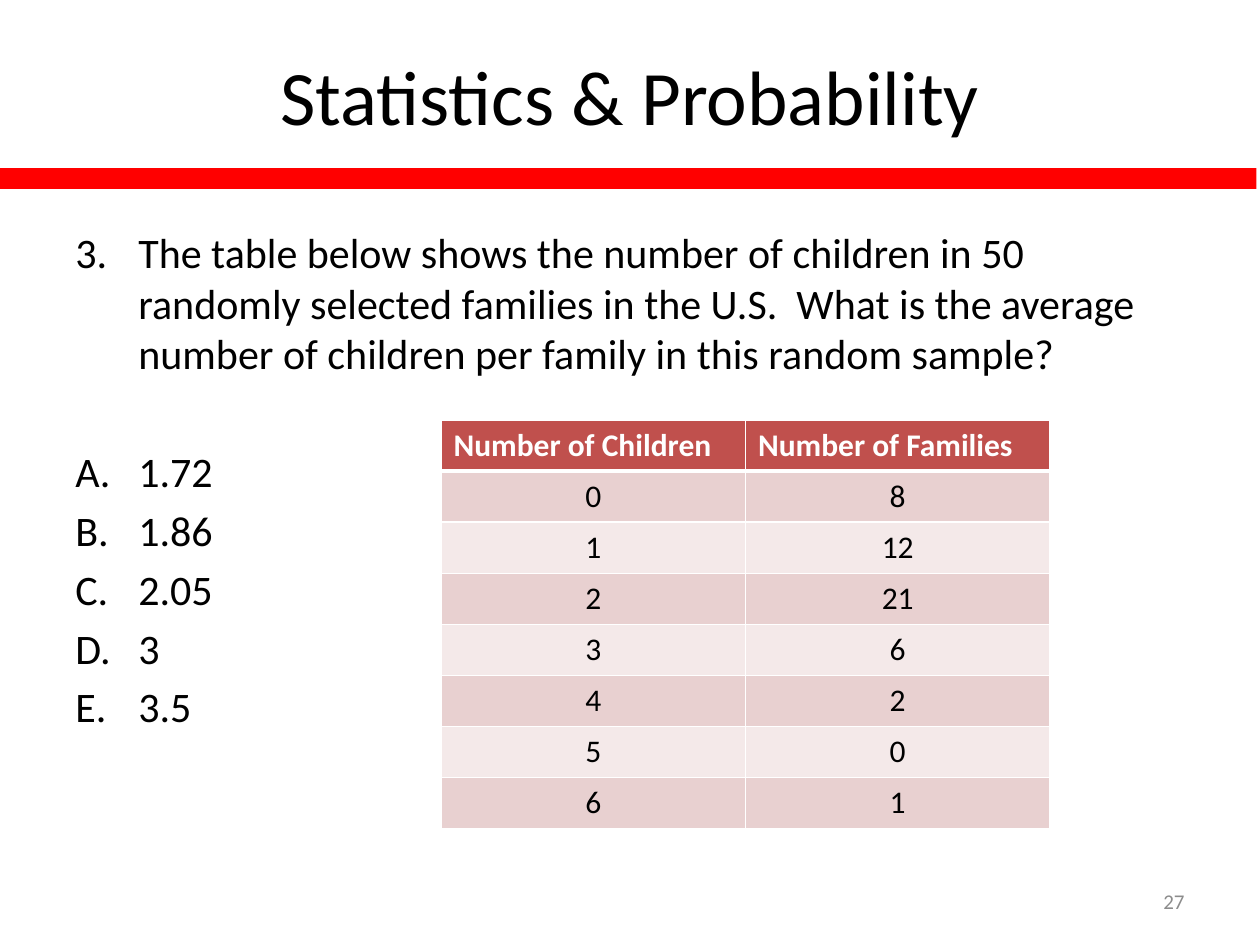
from dataclasses import dataclass
from typing import Any

from lxml.etree import SubElement
from pptx import Presentation
from pptx.dml.color import RGBColor
from pptx.enum.shapes import MSO_SHAPE
from pptx.enum.text import MSO_ANCHOR, PP_ALIGN
from pptx.oxml.ns import qn
from pptx.util import Pt


@dataclass(frozen=True)
class Theme:
    font: str = "Calibri"
    title_size: float = 44
    body_size: float = 24
    table_size: float = 18
    number_size: float = 12
    black: str = "000000"
    white: str = "FFFFFF"
    gray: str = "8C8C8C"
    bar: str = "FF0000"
    header: str = "C0504D"
    bands: tuple[str, str] = ("E8D0D0", "F4E9E9")


@dataclass(frozen=True)
class Area:
    left: float
    top: float
    width: float
    height: float

    def lengths(self) -> tuple[Pt, ...]:
        return Pt(self.left), Pt(self.top), Pt(self.width), Pt(self.height)


@dataclass(frozen=True)
class ListItem:
    text: str
    numbering: str
    start: int = 1
    space_before: float = 4.8


THEME = Theme()
HANGING = 36
BLANK_LINE = 29.2

ITEMS = [
    ListItem(
        "The table below shows the number of children in 50 randomly selected "
        "families in the U.S.  What is the average number of children per family "
        "in this random sample?", "arabicPeriod", 3),
    ListItem("1.72", "alphaUcPeriod", space_before=4.8 + BLANK_LINE + 4.8),
    *(ListItem(answer, "alphaUcPeriod") for answer in ("1.86", "2.05", "3", "3.5")),
]
HEADINGS = ("Number of Children", "Number of Families")
FAMILIES = (8, 12, 21, 6, 2, 0, 1)


def set_values(target: Any, values: dict[str, Any]) -> None:
    for name, value in values.items():
        setattr(target, name, value)


def write(para: Any, text: str, size: float, color: str,
          bold: bool = False, align: PP_ALIGN = PP_ALIGN.LEFT) -> None:
    para.alignment = align
    span = para.add_run()
    span.text = text
    set_values(span.font, {"name": THEME.font, "size": Pt(size), "bold": bold})
    span.font.color.rgb = RGBColor.from_string(color)


def add_text_frame(page: Any, area: Area, anchor: MSO_ANCHOR) -> Any:
    frame = page.shapes.add_textbox(*area.lengths()).text_frame
    set_values(frame, {"word_wrap": True, "vertical_anchor": anchor})
    return frame


def add_line(page: Any, area: Area, text: str, size: float, color: str,
             align: PP_ALIGN) -> None:
    frame = add_text_frame(page, area, MSO_ANCHOR.MIDDLE)
    write(frame.paragraphs[0], text, size, color, align=align)


def add_numbered_list(page: Any, area: Area, items: list[ListItem]) -> None:
    frame = add_text_frame(page, area, MSO_ANCHOR.TOP)
    for index, item in enumerate(items):
        para = frame.add_paragraph() if index else frame.paragraphs[0]
        write(para, item.text, THEME.body_size, THEME.black)
        para.space_before = Pt(item.space_before)
        properties = para._p.get_or_add_pPr()
        properties.set("marL", str(Pt(HANGING)))
        properties.set("indent", str(-Pt(HANGING)))
        SubElement(properties, qn("a:buFont"), typeface=THEME.font)
        SubElement(properties, qn("a:buAutoNum"), type=item.numbering,
                   startAt=str(item.start))


def add_bar(page: Any, area: Area) -> None:
    bar = page.shapes.add_shape(MSO_SHAPE.RECTANGLE, *area.lengths())
    bar.shadow.inherit = False
    bar.fill.solid()
    bar.fill.fore_color.rgb = RGBColor.from_string(THEME.bar)
    bar.line.fill.background()


def add_borders(cell: Any, widths: dict[str, float]) -> None:
    properties = cell._tc.get_or_add_tcPr()
    for side, width in widths.items():
        line = SubElement(properties, qn(f"a:ln{side}"), w=str(Pt(width)))
        fill = SubElement(line, qn("a:solidFill"))
        SubElement(fill, qn("a:srgbClr"), val=THEME.white)


def add_table(page: Any, area: Area, rows: list[tuple[str, ...]]) -> None:
    """Draw a table whose first row is the heading and whose others are banded."""
    table = page.shapes.add_table(len(rows), len(rows[0]), *area.lengths()).table
    for row_index, row in enumerate(rows):
        table.rows[row_index].height = Pt(area.height / len(rows))
        heading = row_index == 0
        fill = THEME.header if heading else THEME.bands[(row_index - 1) % 2]
        for column_index, text in enumerate(row):
            cell = table.cell(row_index, column_index)
            add_borders(cell, {"L": 1, "R": 1, "T": 3 if row_index == 1 else 1,
                               "B": 3 if heading else 1})
            cell.fill.solid()
            cell.fill.fore_color.rgb = RGBColor.from_string(fill)
            write(cell.text_frame.paragraphs[0], text, THEME.table_size,
                  THEME.white if heading else THEME.black, bold=heading,
                  align=PP_ALIGN.LEFT if heading else PP_ALIGN.CENTER)


def main() -> None:
    deck = Presentation()
    set_values(deck, {"slide_width": Pt(720), "slide_height": Pt(540)})
    page = deck.slides.add_slide(deck.slide_layouts[6])
    add_line(page, Area(33, 18, 654, 72), "Statistics & Probability",
             THEME.title_size, THEME.black, PP_ALIGN.CENTER)
    add_numbered_list(page, Area(36, 126, 648, 374.4), ITEMS)
    add_line(page, Area(516, 500.5, 168, 28.75), "27",
             THEME.number_size, THEME.gray, PP_ALIGN.RIGHT)
    add_bar(page, Area(-2, 96, 720, 12))
    rows = [HEADINGS, *((str(children), str(count))
                        for children, count in enumerate(FAMILIES))]
    add_table(page, Area(252, 240, 348, 233.6), rows)
    deck.save("out.pptx")


if __name__ == "__main__":
    main()
